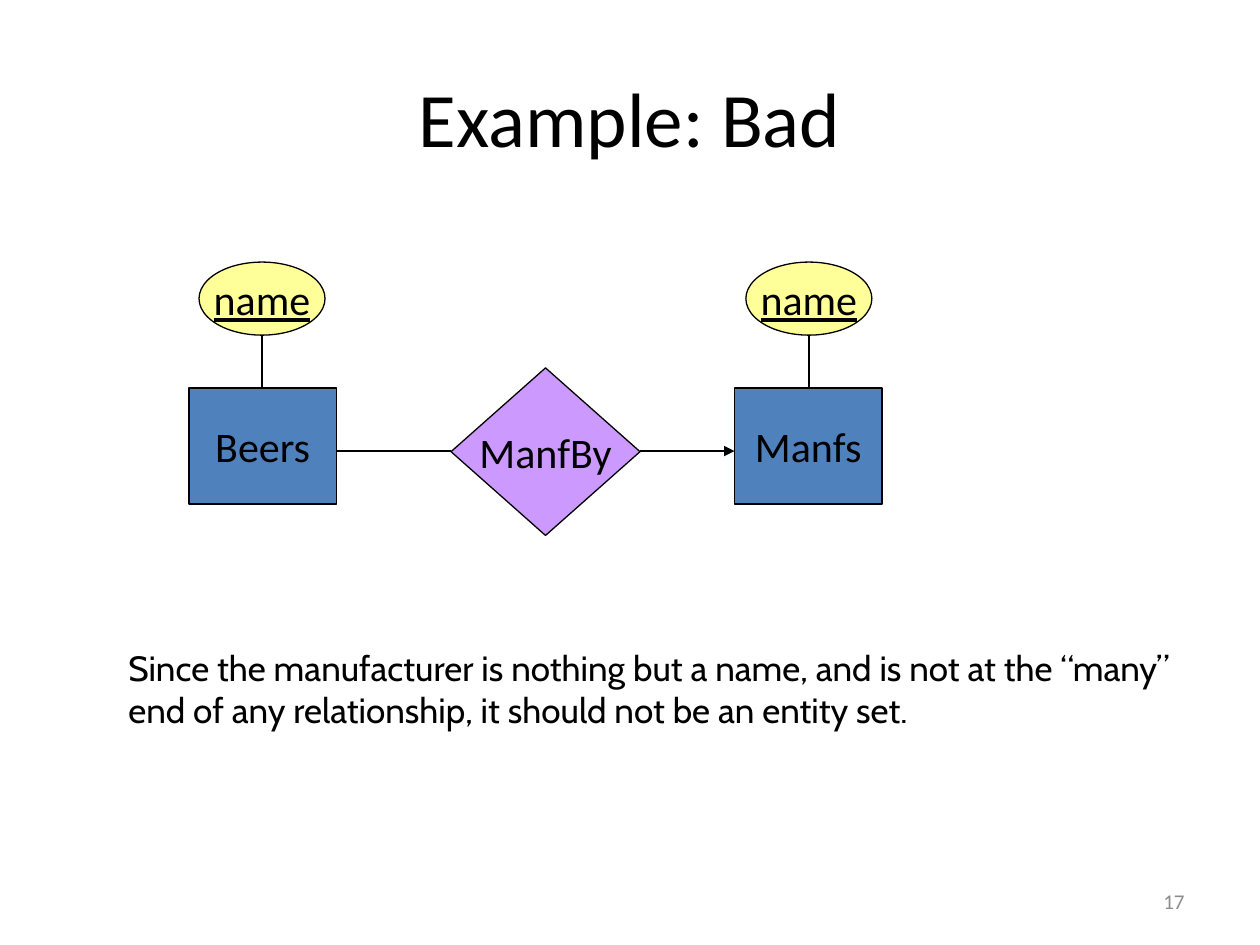
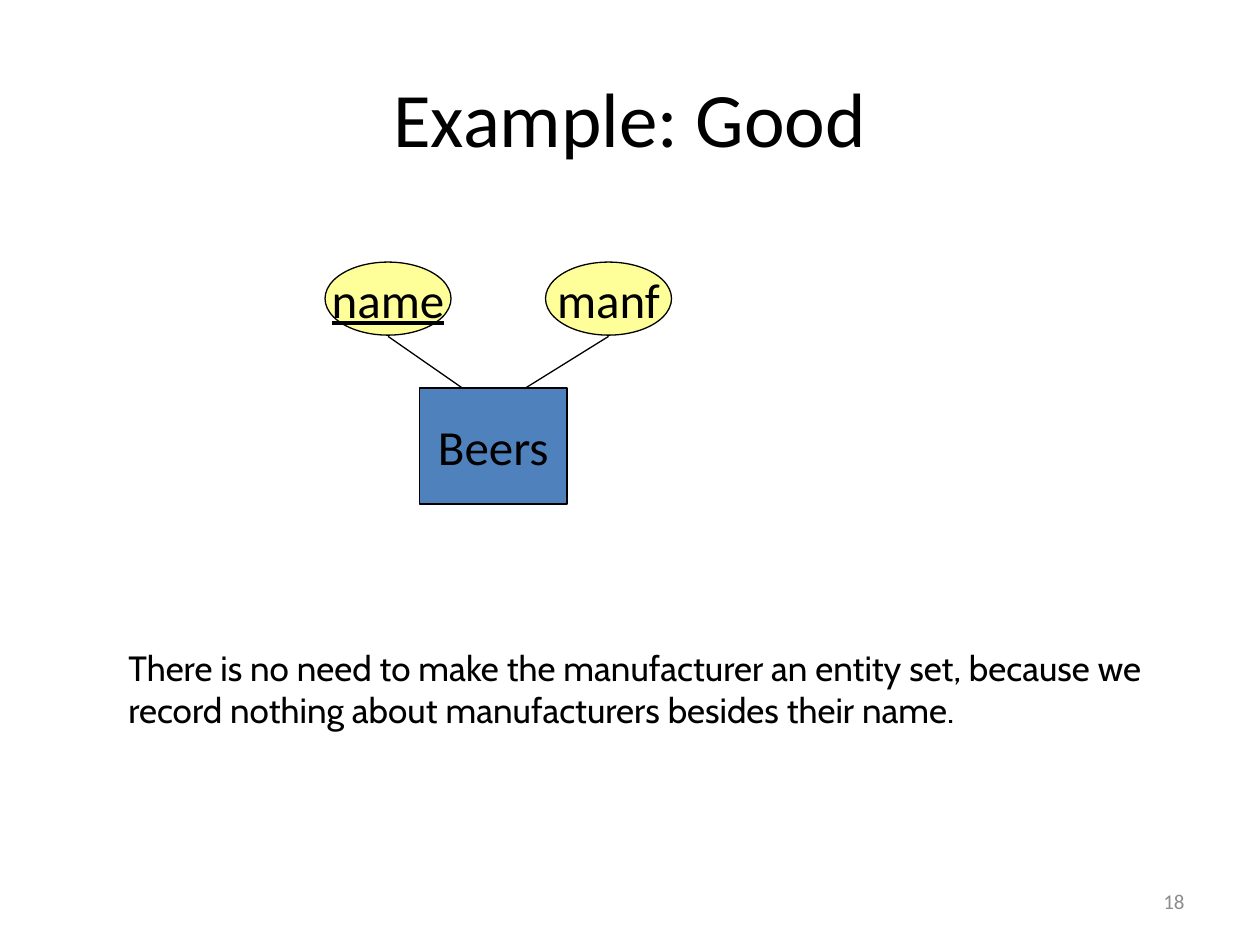
from lxml import etree
from pptx import Presentation
from pptx.dml.color import RGBColor
from pptx.enum.shapes import MSO_CONNECTOR, MSO_SHAPE
from pptx.enum.text import MSO_ANCHOR, PP_ALIGN
from pptx.oxml.ns import qn
from pptx.util import Inches, Pt

STRAIGHT = MSO_CONNECTOR.STRAIGHT
LEFT, CENTER, RIGHT = PP_ALIGN.LEFT, PP_ALIGN.CENTER, PP_ALIGN.RIGHT
TOP, MIDDLE = MSO_ANCHOR.TOP, MSO_ANCHOR.MIDDLE

BLACK = RGBColor(0x00, 0x00, 0x00)
GRAY = RGBColor(0x8C, 0x8C, 0x8C)
BLUE = RGBColor(0x4F, 0x81, 0xBD)
PURPLE = RGBColor(0xCC, 0x99, 0xFF)
YELLOW = RGBColor(0xFF, 0xFF, 0x99)

# Shared text styles: font, alignment, anchor
TITLE = ({"name": "Calibri", "size": Pt(44)}, BLACK, CENTER, MIDDLE)
NOTE = ({"name": "Cabin", "size": Pt(20)}, BLACK, LEFT, TOP)
NUMBER = ({"name": "Calibri", "size": Pt(12)}, GRAY, RIGHT, MIDDLE)

# Diagram parts: preset, fill, top, width, height
NODE_KINDS = {
    "entity": (MSO_SHAPE.RECTANGLE, BLUE, 3.08, 1.17, 0.92),
    "relationship": (MSO_SHAPE.DIAMOND, PURPLE, 2.92, 1.5, 1.33),
    "attribute": (MSO_SHAPE.OVAL, YELLOW, 2.08, 1, 0.58),
    "key": (MSO_SHAPE.OVAL, YELLOW, 2.08, 1, 0.58),
}
ATTRIBUTE_BOTTOM, ENTITY_TOP, MIDLINE = 2.67, 3.08, 3.58

# Nodes: kind, label, left. Links: start, end, has an arrowhead
SLIDES = [
    {
        "title": "Example: Bad",
        "number": "17",
        "note": "Since the manufacturer is nothing but a name, and is not at the “many” "
                "end of any relationship, it should not be an entity set.",
        "note_width": 8.58,
        "label_size": 24,
        "nodes": [
            ("entity", "Beers", 1.5),
            ("entity", "Manfs", 5.83),
            ("relationship", "ManfBy", 3.58),
            ("key", "name", 1.58),
            ("key", "name", 5.92),
        ],
        "links": [
            ((3.58, MIDLINE), (2.67, MIDLINE), False),
            ((5.08, MIDLINE), (5.83, MIDLINE), True),
            ((2.08, ATTRIBUTE_BOTTOM), (2.08, ENTITY_TOP), False),
            ((6.42, ATTRIBUTE_BOTTOM), (6.42, ENTITY_TOP), False),
        ],
    },
    {
        "title": "Example: Good",
        "number": "18",
        "note": "There is no need to make the manufacturer an entity set, because we "
                "record nothing about manufacturers besides their name.",
        "note_width": 8.42,
        "label_size": 28,
        "nodes": [
            ("entity", "Beers", 3.33),
            ("key", "name", 2.58),
            ("attribute", "manf", 4.33),
        ],
        "links": [
            ((3.08, ATTRIBUTE_BOTTOM), (3.67, ENTITY_TOP), False),
            ((4.83, ATTRIBUTE_BOTTOM), (4.17, ENTITY_TOP), False),
        ],
    },
]


def write_text(shape, text, style, wrap=True):
    font_values, color, alignment, anchor = style
    frame = shape.text_frame
    frame.word_wrap = wrap
    frame.vertical_anchor = anchor
    paragraph = frame.paragraphs[0]
    paragraph.alignment = alignment
    run = paragraph.add_run()
    run.text = text
    for name, value in font_values.items():
        setattr(run.font, name, value)
    run.font.color.rgb = color


def draw_link(slide, start, end, has_arrow):
    x1, y1, x2, y2 = [Inches(value) for value in start + end]
    connector = slide.shapes.add_connector(STRAIGHT, x1, y1, x2, y2)
    connector.line.color.rgb = BLACK
    connector.line.width = Pt(0.75)
    if has_arrow:
        line = connector.line._get_or_add_ln()
        etree.SubElement(line, qn("a:tailEnd"), type="triangle")
    etree.SubElement(connector._element.spPr, qn("a:effectLst"))


presentation = Presentation()
presentation.slide_width = Inches(10)
presentation.slide_height = Inches(7.5)
blank_layout = presentation.slide_layouts[6]

for content in SLIDES:
    slide = presentation.slides.add_slide(blank_layout)

    # Slide number, title and note
    text_boxes = [
        (content["number"], NUMBER, (7.17, 6.95, 2.33, 0.4)),
        (content["title"], TITLE, (0.5, 0.3, 9, 1.25)),
        (content["note"], NOTE, (0.92, 5.08, content["note_width"], 0.77)),
    ]
    for text, style, box in text_boxes:
        shape = slide.shapes.add_textbox(*[Inches(value) for value in box])
        write_text(shape, text, style)

    # Entities, relationships and attributes; keys are underlined
    for kind, label, left in content["nodes"]:
        preset, fill_color, top, width, height = NODE_KINDS[kind]
        box = [Inches(value) for value in (left, top, width, height)]
        shape = slide.shapes.add_shape(preset, *box)
        shape.shadow.inherit = False
        shape.fill.solid()
        shape.fill.fore_color.rgb = fill_color
        shape.line.color.rgb = BLACK
        shape.line.width = Pt(0.75)
        font_values = {
            "name": "Calibri",
            "size": Pt(content["label_size"]),
            "underline": kind == "key",
        }
        write_text(shape, label, (font_values, BLACK, CENTER, MIDDLE), wrap=False)

    # Lines between the nodes
    for start, end, has_arrow in content["links"]:
        draw_link(slide, start, end, has_arrow)

presentation.save("out.pptx")
